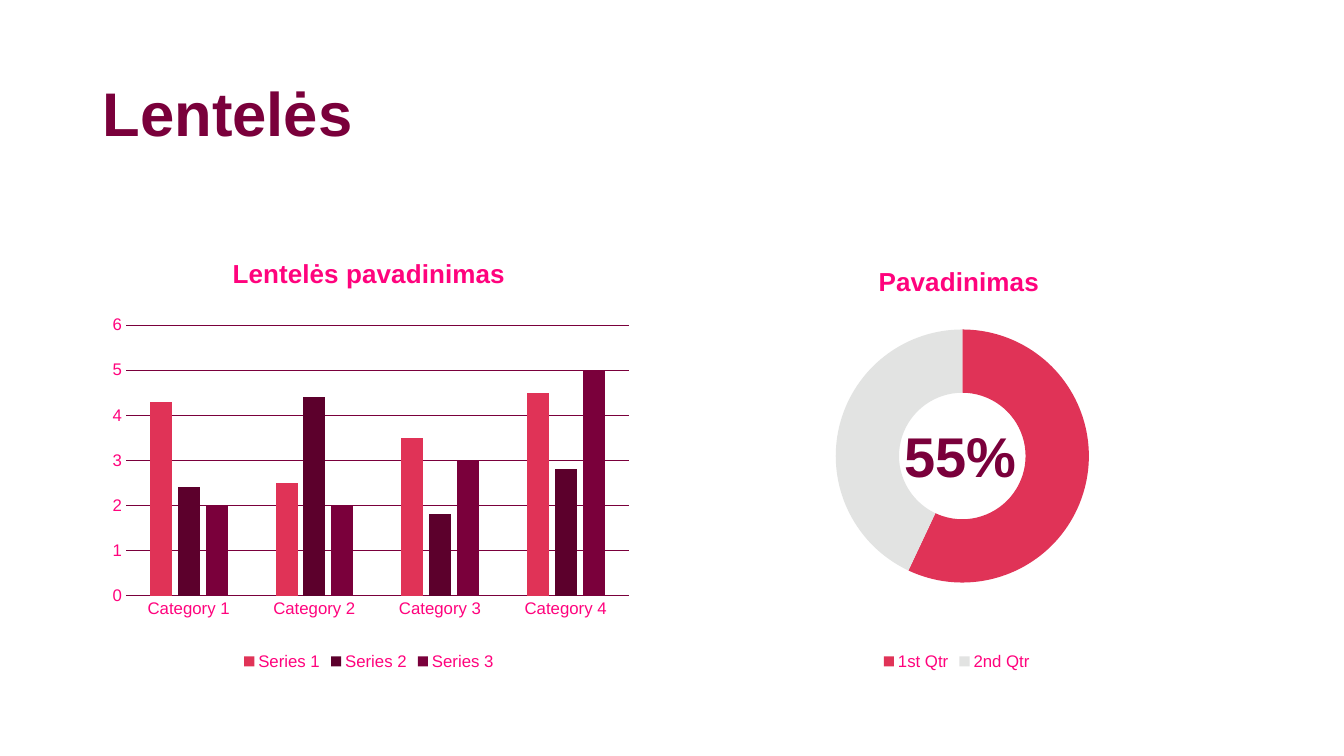
from lxml import etree
from pptx import Presentation
from pptx.chart.data import CategoryChartData
from pptx.dml.color import RGBColor
from pptx.enum.chart import XL_CHART_TYPE, XL_LEGEND_POSITION, XL_TICK_MARK
from pptx.enum.text import MSO_ANCHOR
from pptx.oxml.ns import qn
from pptx.util import Inches, Pt

FONT = "Arial"
WINE, PINK = "7A003B", "FF037D"
CHART_TOP, CHART_WIDTH, CHART_HEIGHT = 2.36, 5.48, 4.33

COLUMNS = {
    "title": "Lentelės pavadinimas",
    "left": 0.92,
    "categories": ["Category 1", "Category 2", "Category 3", "Category 4"],
    "series": {
        "Series 1": [4.3, 2.5, 3.5, 4.5],
        "Series 2": [2.4, 4.4, 1.8, 2.8],
        "Series 3": [2, 2, 3, 5],
    },
    "colors": ["E03357", "5C002C", WINE],
    "plot": {"x": 0.06, "y": 0.2, "w": 0.91, "h": 0.62},
}
DOUGHNUT = {
    "title": "Pavadinimas",
    "left": 6.75,
    "categories": ["1st Qtr", "2nd Qtr"],
    "series": {"Series 1": [57, 43]},
    "colors": ["E03357", "E2E3E2"],
    "plot": {"x": 0.28, "y": 0.21, "w": 0.46, "h": 0.58},
}


def color(hex_value):
    return RGBColor.from_string(hex_value)


def style_font(font, size, hex_value, bold=False):
    font.name = FONT
    font.size = Pt(size)
    font.bold = bold
    font.color.rgb = color(hex_value)


def add_text(slide, text, left, top, width, height, size, wrap=True, line_spacing=None):
    box = slide.shapes.add_textbox(Inches(left), Inches(top), Inches(width), Inches(height))
    frame = box.text_frame
    frame.word_wrap = wrap
    frame.vertical_anchor = MSO_ANCHOR.TOP
    paragraph = frame.paragraphs[0]
    paragraph.line_spacing = line_spacing
    run = paragraph.add_run()
    run.text = text
    style_font(run.font, size, WINE, bold=True)


def set_layout(parent, position, before, inner=False):
    """Place a chart part by fractions of the chart area."""
    for old in parent.findall(qn("c:layout")):
        parent.remove(old)
    layout = etree.Element(qn("c:layout"))
    manual = etree.SubElement(layout, qn("c:manualLayout"))
    settings = [("layoutTarget", "inner")] if inner else []
    settings += [("xMode", "edge"), ("yMode", "edge"), *position.items()]
    for tag, value in settings:
        etree.SubElement(manual, qn(f"c:{tag}")).set("val", str(value))
    before.addprevious(layout)


def add_chart(slide, chart_type, content):
    data = CategoryChartData()
    data.categories = content["categories"]
    for name, values in content["series"].items():
        data.add_series(name, values)
    chart = slide.shapes.add_chart(
        chart_type, Inches(content["left"]), Inches(CHART_TOP),
        Inches(CHART_WIDTH), Inches(CHART_HEIGHT), data).chart
    style_font(chart.font, 10, WINE)

    chart.has_title = True
    chart.chart_title.include_in_layout = False
    run = chart.chart_title.text_frame.paragraphs[0].add_run()
    run.text = content["title"]
    style_font(run.font, 18.6, PINK, bold=True)

    chart.has_legend = True
    chart.legend.position = XL_LEGEND_POSITION.BOTTOM
    chart.legend.include_in_layout = False
    style_font(chart.legend.font, 12, PINK)

    plot = chart.plots[0]
    plot_area = plot._element.getparent()
    set_layout(plot_area, content["plot"], plot._element, inner=True)
    return chart


def paint(part, hex_value):
    part.format.fill.solid()
    part.format.fill.fore_color.rgb = color(hex_value)
    part.format.line.fill.background()


def add_columns(slide):
    chart = add_chart(slide, XL_CHART_TYPE.COLUMN_CLUSTERED, COLUMNS)
    plot = chart.plots[0]
    plot.vary_by_categories = False
    plot.gap_width, plot.overlap = 219, -27
    for series, hex_value in zip(plot.series, COLUMNS["colors"]):
        paint(series, hex_value)

    for axis in (chart.category_axis, chart.value_axis):
        axis.major_tick_mark = axis.minor_tick_mark = XL_TICK_MARK.NONE
        style_font(axis.tick_labels.font, 12, PINK)
    category_line = chart.category_axis.format.line
    category_line.color.rgb = color(WINE)
    category_line.width = Pt(0.75)

    value_axis = chart.value_axis
    value_axis.minimum_scale, value_axis.maximum_scale, value_axis.major_unit = 0, 6, 1
    value_axis.format.line.fill.background()
    grid_line = value_axis.major_gridlines.format.line
    grid_line.color.rgb = color(WINE)
    grid_line.width = Pt(0.5)


def add_doughnut(slide):
    chart = add_chart(slide, XL_CHART_TYPE.DOUGHNUT, DOUGHNUT)
    plot = chart.plots[0]
    for index, hex_value in enumerate(DOUGHNUT["colors"]):
        paint(plot.series[0].points[index], hex_value)
    plot._element.find(qn("c:holeSize")).set("val", "61")
    title = chart.chart_title._element
    set_layout(title, {"x": 0.35, "y": 0.05}, title.find(qn("c:overlay")))


def main():
    presentation = Presentation()
    presentation.slide_width = Inches(13.33)
    presentation.slide_height = Inches(7.5)
    slide = presentation.slides.add_slide(presentation.slide_layouts[6])
    add_columns(slide)
    add_doughnut(slide)
    add_text(slide, "55%", 8.87, 4.13, 1.33, 0.77, 40, wrap=False)
    add_text(slide, "Lentelės", 0.92, 0.78, 9.77, 1.45, 44, line_spacing=0.9)
    presentation.save("out.pptx")


if __name__ == "__main__":
    main()
